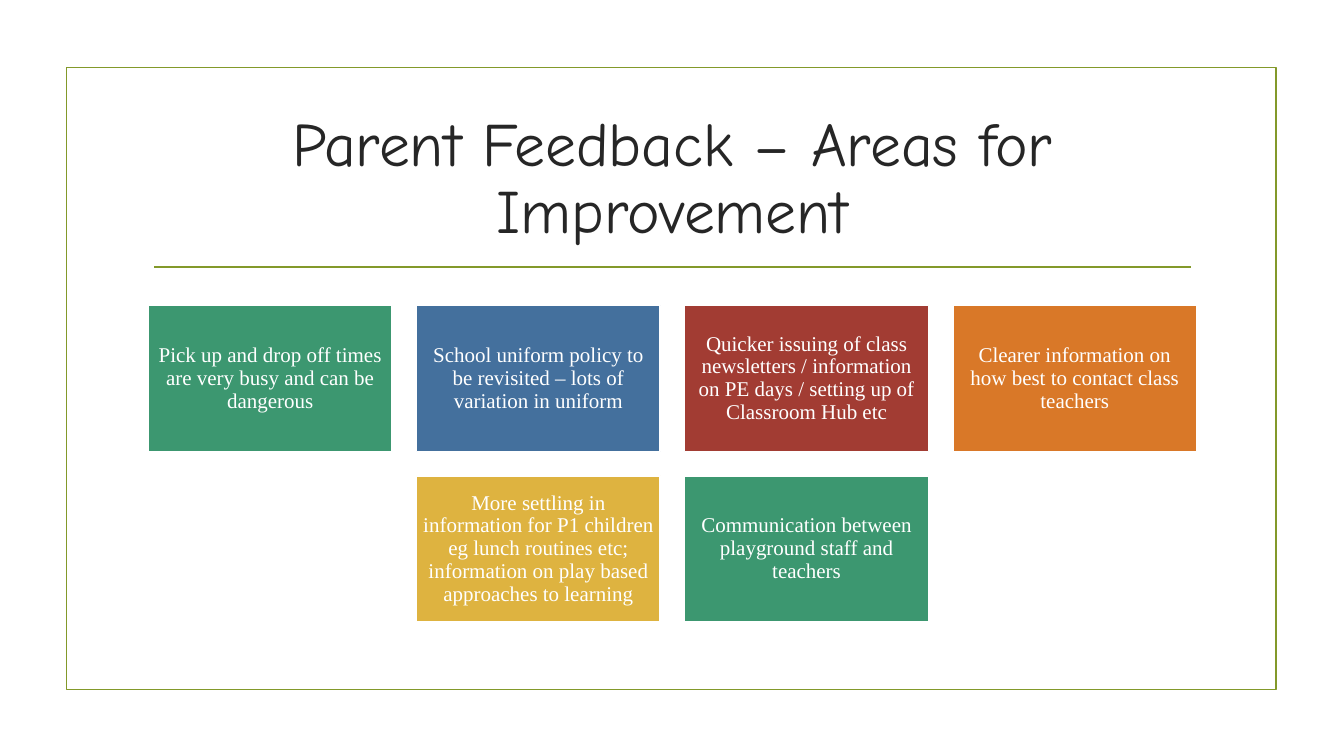
from dataclasses import dataclass

from lxml.etree import SubElement
from pptx import Presentation
from pptx.dml.color import RGBColor as Color
from pptx.enum.shapes import MSO_CONNECTOR as Link, MSO_SHAPE as Shape
from pptx.enum.text import MSO_ANCHOR as Anchor, PP_ALIGN as Align
from pptx.oxml.ns import qn
from pptx.util import Inches, Pt

# Content: rows of (text, colour name)
TITLE = "Parent Feedback – Areas for Improvement"
ROWS = [
    [
        ("Pick up and drop off times are very busy and can be dangerous", "green"),
        ("School uniform policy to be revisited – lots of variation in uniform", "blue"),
        ("Quicker issuing of class newsletters / information on PE days / "
         "setting up of Classroom Hub etc", "red"),
        ("Clearer information on how best to contact class teachers", "orange"),
    ],
    [
        ("More settling in information for P1 children eg lunch routines etc; "
         "information on play based approaches to learning", "yellow"),
        ("Communication between playground staff and teachers", "green"),
    ],
]


@dataclass(frozen=True)
class Theme:
    green: str = "3C9770"
    blue: str = "44709D"
    red: str = "A23C33"
    orange: str = "D97828"
    yellow: str = "DEB340"
    olive: str = "83992A"
    dark: str = "262626"
    white: str = "FFFFFF"
    head_font: str = "Comic Neue"
    card_font: str = "Times New Roman"
    head_size: float = 44
    card_size: float = 15
    line: float = 1.25


THEME = Theme()

# Card grid, in inches
MID, TOP = 6.67, 3.03
WIDE, HIGH, GAP = 2.42, 1.45, 0.24


def set_line(item, color):
    item.line.color.rgb = Color.from_string(color)
    item.line.width = Pt(THEME.line)


def set_text(frame, text, font, size, color):
    frame.text = text
    frame.word_wrap = True
    frame.vertical_anchor = Anchor.MIDDLE
    para = frame.paragraphs[0]
    para.alignment = Align.CENTER
    para.line_spacing = 0.9
    run = para.runs[0]
    run.font.name = font
    run.font.size = Pt(size)
    run.font.color.rgb = Color.from_string(color)


def add_rect(slide, left, top, width, height, line, fill=None):
    rect = slide.shapes.add_shape(
        Shape.RECTANGLE, Inches(left), Inches(top), Inches(width), Inches(height))
    rect.shadow.inherit = False
    if fill:
        rect.fill.solid()
        rect.fill.fore_color.rgb = Color.from_string(fill)
    else:
        rect.fill.background()
    set_line(rect, line)
    return rect


def add_card(slide, left, top, text, fill):
    card = add_rect(slide, left, top, WIDE, HIGH, THEME.white, fill)
    frame = card.text_frame
    frame.margin_left = frame.margin_right = Inches(0.06)
    frame.margin_top = frame.margin_bottom = Inches(0.06)
    set_text(frame, text, THEME.card_font, THEME.card_size, THEME.white)


def main():
    deck = Presentation()
    deck.slide_width, deck.slide_height = Inches(13.33), Inches(7.5)
    slide = deck.slides.add_slide(deck.slide_layouts[5])

    # Frame and rule
    add_rect(slide, 0.66, 0.67, 12, 6.17, THEME.olive)
    rule = slide.shapes.add_connector(
        Link.STRAIGHT, Inches(1.53), Inches(2.65), Inches(11.81), Inches(2.65))
    set_line(rule, THEME.olive)
    SubElement(rule._element.spPr, qn("a:effectLst"))

    # Title
    title = slide.shapes.title
    title.left, title.top = Inches(1.42), Inches(1.07)
    title.width, title.height = Inches(10.5), Inches(1.43)
    set_text(title.text_frame, TITLE, THEME.head_font, THEME.head_size, THEME.dark)

    # Cards, each row centred
    for r, row in enumerate(ROWS):
        span = len(row) * (WIDE + GAP) - GAP
        for c, (text, name) in enumerate(row):
            left = MID - span / 2 + c * (WIDE + GAP)
            top = TOP + r * (HIGH + GAP)
            add_card(slide, left, top, text, getattr(THEME, name))

    deck.save("out.pptx")


if __name__ == "__main__":
    main()
